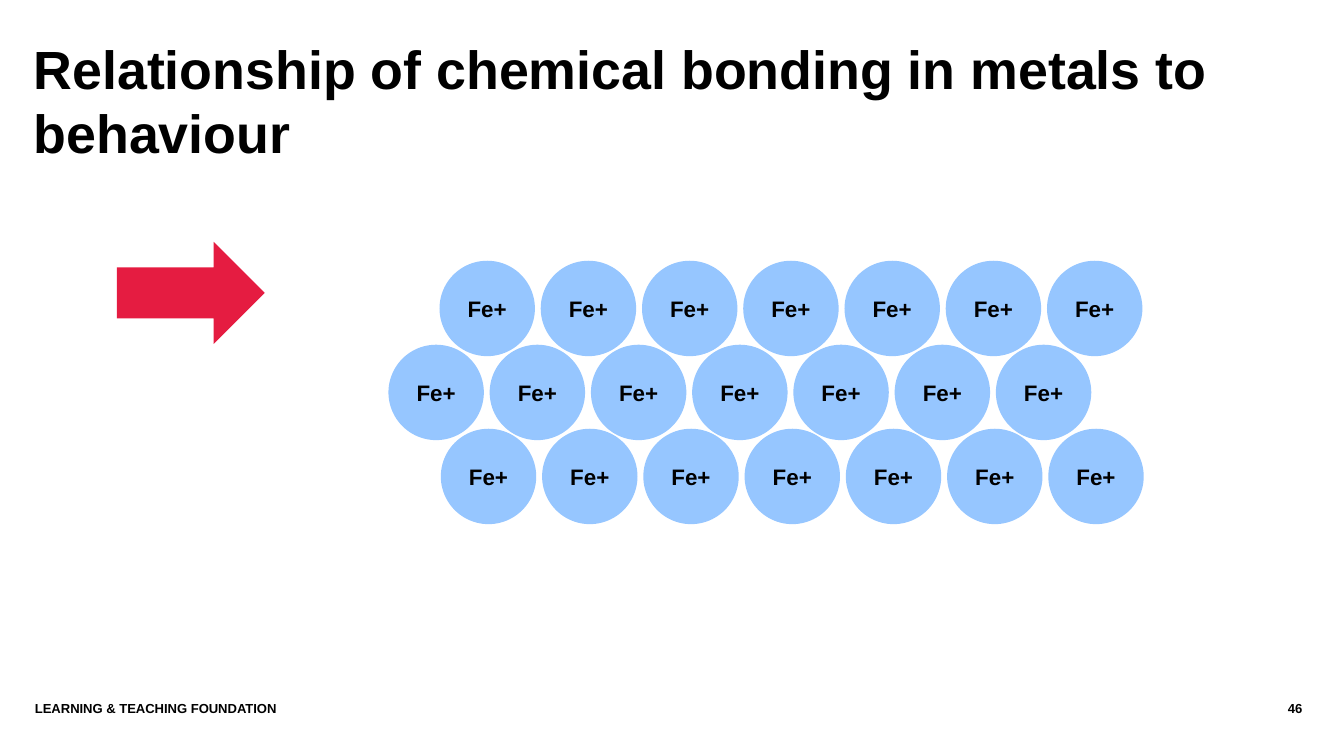
from pptx import Presentation
from pptx.dml.color import RGBColor
from pptx.enum.shapes import MSO_SHAPE
from pptx.enum.text import MSO_ANCHOR, MSO_AUTO_SIZE, PP_ALIGN
from pptx.util import Inches, Pt

BLACK = RGBColor(0x00, 0x00, 0x00)
RED = RGBColor(0xE5, 0x1C, 0x41)
BLUE = RGBColor(0x96, 0xC6, 0xFF)

FRAME_FORMAT = {
    "margin_left": 0, "margin_right": 0, "margin_top": 0, "margin_bottom": 0,
    "auto_size": MSO_AUTO_SIZE.NONE,
}


def write(shape, text, size, align=PP_ALIGN.LEFT, anchor=MSO_ANCHOR.TOP, wrap=True):
    frame = shape.text_frame
    frame.text = text
    for name, value in {**FRAME_FORMAT, "vertical_anchor": anchor, "word_wrap": wrap}.items():
        setattr(frame, name, value)
    para = frame.paragraphs[0]
    para.alignment = align
    span = para.runs[0]
    for name, value in {"name": "Arial", "size": Pt(size), "bold": True}.items():
        setattr(span.font, name, value)
    span.font.color.rgb = BLACK


def paint(shape, color):
    shape.shadow.inherit = False
    shape.fill.solid()
    shape.fill.fore_color.rgb = color
    shape.line.fill.background()


deck = Presentation()
deck.slide_width = Inches(10)
deck.slide_height = deck.slide_width * 9 // 16
page = deck.slides.add_slide(deck.slide_layouts[5])

# Title
title = page.shapes.title
title.left, title.top, title.width, title.height = map(Inches, (0.25, 0.27, 9.23, 0.76))
write(title, "Relationship of chemical bonding in metals to behaviour", 28.8)
title.text_frame.paragraphs[0].line_spacing = Pt(34.3)

# Force arrow
arrow = page.shapes.add_shape(
    MSO_SHAPE.RIGHT_ARROW, Inches(0.87), Inches(1.8), Inches(1.1), Inches(0.76))
paint(arrow, RED)

# Lattice of iron ions: one group for each layer, the middle one shifted left
IONS_PER_LAYER = 7
ION_SIZE = 0.71
ION_PITCH = 4.52 / (IONS_PER_LAYER - 1)
LATTICE_TOP = 1.94
LAYER_PITCH = 1.25 / 2
for row, layer_left in enumerate((3.27, 2.89, 3.28)):
    layer = page.shapes.add_group_shape()
    for column in range(IONS_PER_LAYER):
        ion = layer.shapes.add_shape(
            MSO_SHAPE.OVAL,
            Inches(layer_left + column * ION_PITCH), Inches(LATTICE_TOP + row * LAYER_PITCH),
            Inches(ION_SIZE), Inches(ION_SIZE))
        paint(ion, BLUE)
        write(ion, "Fe+", 12, PP_ALIGN.CENTER, MSO_ANCHOR.MIDDLE, wrap=False)

# Footer and page number
for text, left, width, align in (
    ("LEARNING & TEACHING FOUNDATION", 0.26, 8.41, PP_ALIGN.LEFT),
    ("46", 8.7, 0.99, PP_ALIGN.RIGHT),
):
    box = page.shapes.add_textbox(Inches(left), Inches(5.21), Inches(width), Inches(0.3))
    write(box, text, 7, align)

deck.save("out.pptx")
